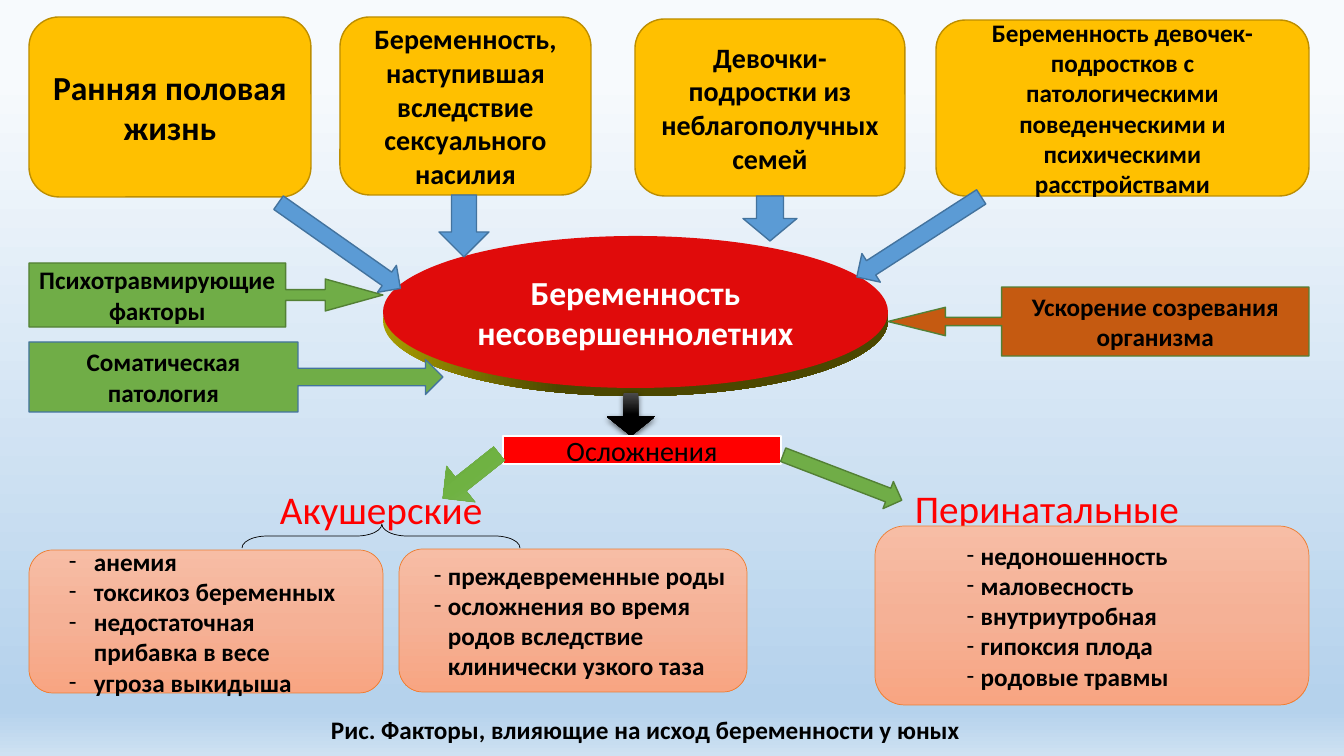
from dataclasses import dataclass

from lxml import etree
from pptx import Presentation
from pptx.dml.color import RGBColor
from pptx.enum.shapes import MSO_SHAPE
from pptx.enum.text import PP_ALIGN
from pptx.oxml.ns import qn
from pptx.util import Emu, Pt

OVAL = MSO_SHAPE.OVAL
ROUND = MSO_SHAPE.ROUNDED_RECTANGLE
RIGHT = MSO_SHAPE.RIGHT_ARROW
DOWN = MSO_SHAPE.DOWN_ARROW
MINUS = MSO_SHAPE.MATH_MINUS
BRACE = MSO_SHAPE.LEFT_BRACE
RIGHT_CALL = MSO_SHAPE.RIGHT_ARROW_CALLOUT
LEFT_CALL = MSO_SHAPE.LEFT_ARROW_CALLOUT
CENTER = PP_ALIGN.CENTER
LEFT = PP_ALIGN.LEFT
SCALE = 914400 / 100.8


@dataclass(frozen=True)
class Theme:
    """Colours, gradients, font and type sizes of the slide."""
    font: str = "Calibri"
    black: str = "000000"
    white: str = "FFFFFF"
    red: str = "FF0000"
    core: str = "E00B0B"
    gold: str = "FFC000"
    rim: str = "BD8E00"
    blue: str = "5B9BD5"
    navy: str = "43739E"
    green: str = "70AD47"
    moss: str = "538035"
    rust: str = "C55A11"
    coral: str = "ED7D31"
    sky: tuple = ((10, "F7FAFD"), (93, "B5D2EC"), (94, "B5D2EC"), (100, "CEE1F2"))
    peach: tuple = ((0, "F7BDA5"), (50, "F5B196"), (100, "F8A582"))
    leaf: tuple = ((0, "81B861"), (50, "6FB242"), (100, "62A336"))
    coal: tuple = ((0, "4B4B4B"), (50, "000000"), (100, "000000"))
    edge: tuple = ((0, "A89C00"), (35, "4B4700"), (100, "4B4700"))
    head: int = 28
    large: int = 24
    mid: int = 20
    small: int = 18


THEME = Theme()


def px(num):
    """Turn pixels into EMU."""
    return Emu(round(num * SCALE))


def blend(fill, root, stops, angle=270):
    """Fill with a gradient made of the given stops."""
    fill.gradient()
    fill.gradient_angle = angle
    group = root.find(".//" + qn("a:gsLst"))
    for old in list(group):
        group.remove(old)
    for place, color in stops:
        stop = etree.SubElement(group, qn("a:gs"), pos=str(place * 1000))
        etree.SubElement(stop, qn("a:srgbClr"), val=color)


def style(frame, size, color, bold, align):
    """Format every paragraph and run of a text frame."""
    frame.word_wrap = True
    for para in frame.paragraphs:
        para.alignment = align
        para.font.size = Pt(size)
        for run in para.runs:
            run.font.name = THEME.font
            run.font.size = Pt(size)
            run.font.bold = bold
            run.font.color.rgb = RGBColor.from_string(color)


def add_form(slide, kind, box, fill=None, line=None, width=1, adj=(), turn=0, angle=270):
    """Add a preset shape with its fill, line, adjustments and rotation."""
    form = slide.shapes.add_shape(kind, *map(px, box))
    form.shadow.inherit = False
    form.rotation = turn
    for index, value in enumerate(adj):
        form.adjustments[index] = value
    if fill is None:
        form.fill.background()
    elif isinstance(fill, tuple):
        blend(form.fill, form.element, fill, angle)
    else:
        form.fill.solid()
        form.fill.fore_color.rgb = RGBColor.from_string(fill)
    if line:
        form.line.color.rgb = RGBColor.from_string(line)
        form.line.width = Pt(width)
    else:
        form.line.fill.background()
    return form


def add_label(form, text, size, color=THEME.black, bold=True):
    """Write centred text into a shape."""
    form.text_frame.text = text
    style(form.text_frame, size, color, bold, CENTER)


def add_text(slide, box, text, size, color, bold=False):
    """Add a free line of text."""
    frame = slide.shapes.add_textbox(*map(px, box)).text_frame
    frame.text = text
    style(frame, size, color, bold, LEFT)


def add_list(slide, box, items, start, hang):
    """Add a rounded panel with a dashed list."""
    panel = add_form(slide, ROUND, box, THEME.peach, THEME.coral, 0.5)
    frame = panel.text_frame
    frame.text = "\n".join(items)
    style(frame, THEME.small, THEME.black, True, LEFT)
    for para in frame.paragraphs:
        props = para._p.get_or_add_pPr()
        props.set("marL", str(px(start + hang)))
        props.set("indent", str(px(-hang)))
        etree.SubElement(props, qn("a:buFont"), typeface=THEME.font)
        etree.SubElement(props, qn("a:buChar"), char="-")


def add_shade(form):
    """Cast a soft shadow below a shape."""
    group = form.element.spPr.find(qn("a:effectLst"))
    shade = etree.SubElement(group, qn("a:outerShdw"), blurRad=str(Pt(4.5)),
                             dist=str(Pt(1.5)), dir="5400000", rotWithShape="0")
    color = etree.SubElement(shade, qn("a:srgbClr"), val=THEME.black)
    etree.SubElement(color, qn("a:alpha"), val="63000")


def add_core(slide):
    """Add the central ellipse on its dark edge."""
    add_form(slide, OVAL, (383, 245, 505, 151), THEME.edge, angle=0)
    core = add_form(slide, OVAL, (383, 236, 505, 152), THEME.core)
    add_label(core, "Беременность несовершеннолетних", THEME.large, THEME.white)


def add_causes(slide):
    """Add the gold boxes and their blue arrows."""
    causes = (
        ((29, 17, 282, 180), "Ранняя половая жизнь", THEME.large),
        ((340, 17, 251, 178), "Беременность, наступившая вследствие сексуального насилия",
         THEME.mid),
        ((635, 19, 270, 177), "Девочки-подростки из неблагополучных семей", THEME.mid),
        ((936, 20, 373, 176), "Беременность девочек-подростков с патологическими "
         "поведенческими и психическими расстройствами", THEME.small),
    )
    for box, text, size in causes:
        add_label(add_form(slide, ROUND, box, THEME.gold, THEME.rim), text, size)
    arrows = (
        (RIGHT, (265, 229, 149, 33), 35.1),
        (DOWN, (439, 195, 50, 62), 0),
        (DOWN, (743, 196, 54, 45), 0),
        (RIGHT, (845, 220, 148, 34), 147.2),
    )
    for kind, box, turn in arrows:
        add_form(slide, kind, box, THEME.blue, THEME.navy, turn=turn)


def add_factors(slide):
    """Add the side callouts that point at the centre."""
    factors = (
        (RIGHT_CALL, (29, 263, 354, 64), THEME.green, THEME.moss,
         (0.169, 0.25, 0.902, 0.725), "Психотравмирующие факторы"),
        (LEFT_CALL, (888, 287, 421, 69), THEME.rust, THEME.moss,
         (0.118, 0.206, 0.832, 0.73), "Ускорение созревания организма"),
        (RIGHT_CALL, (29, 342, 414, 70), THEME.green, THEME.navy,
         (), "Соматическая патология"),
    )
    for kind, box, fill, line, adj, text in factors:
        add_label(add_form(slide, kind, box, fill, line, adj=adj), text, THEME.small)


def add_outcomes(slide):
    """Add the complications bar, its arrows, headings and lists."""
    add_shade(add_form(slide, DOWN, (607, 393, 48, 43), THEME.coal, adj=(0.301, 0.449)))
    bar = add_form(slide, MINUS, (453, 390, 378, 120), THEME.red, THEME.white, 1.5)
    add_label(bar, "Осложнения", THEME.mid, bold=False)
    add_form(slide, RIGHT, (435, 453, 72, 46), THEME.leaf, THEME.green, 0.5,
             (0.386, 0.5), 141.6)
    add_form(slide, RIGHT, (779, 463, 127, 29), THEME.green, THEME.moss, turn=21)
    add_text(slide, (270, 480, 241, 57), "Акушерские", THEME.head, THEME.red)
    add_text(slide, (905, 479, 299, 57), "Перинатальные", THEME.head, THEME.red)
    lists = (
        ((29, 550, 354, 143), 23, 25,
         ("анемия", "токсикоз беременных", "недостаточная\vприбавка в весе",
          "угроза выкидыша")),
        ((875, 526, 434, 179), 73, 14,
         ("недоношенность", "маловесность", "внутриутробная", "гипоксия плода",
          "родовые травмы")),
        ((399, 549, 348, 143), 18, 14,
         ("преждевременные роды",
          "осложнения во время\vродов вследствие\vклинически узкого таза")),
    )
    for box, start, hang, items in lists:
        add_list(slide, box, items, start, hang)
    add_form(slide, BRACE, (369, 397, 24, 278), None, THEME.black, 0.5, (1.045, 0.497), 90)


def main():
    """Build and save the slide."""
    deck = Presentation()
    deck.slide_width, deck.slide_height = px(1344), px(756)
    slide = deck.slides.add_slide(deck.slide_layouts[6])
    blend(slide.background.fill, slide.element, THEME.sky)
    add_core(slide)
    add_causes(slide)
    add_outcomes(slide)
    add_factors(slide)
    add_text(slide, (321, 709, 723, 40),
             "Рис. Факторы, влияющие на исход беременности у юных",
             THEME.small, THEME.black, True)
    deck.save("out.pptx")


if __name__ == "__main__":
    main()
